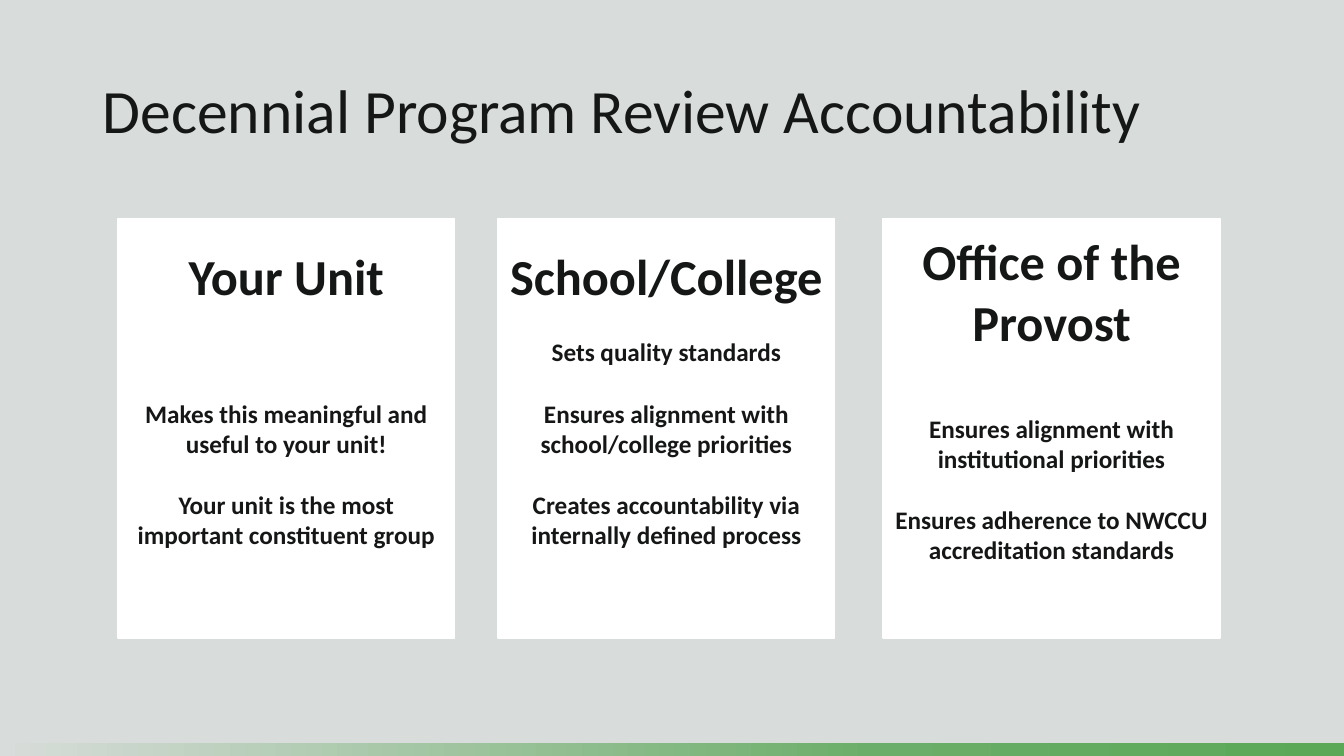
import pptx
import pptx.util
import pptx.dml.color
import pptx.enum.shapes
import pptx.enum.text

Inches = pptx.util.Inches
Pt = pptx.util.Pt
RGBColor = pptx.dml.color.RGBColor
RECTANGLE = pptx.enum.shapes.MSO_SHAPE.RECTANGLE
MIDDLE = pptx.enum.text.MSO_ANCHOR.MIDDLE
ALIGN = pptx.enum.text.PP_ALIGN

MIST = RGBColor(0xD8, 0xDC, 0xDA)
LEAF = RGBColor(0x6B, 0xAE, 0x69)
GREEN = RGBColor(0x5A, 0xA8, 0x58)
INK = RGBColor(0x15, 0x17, 0x16)
WHITE = RGBColor(0xFF, 0xFF, 0xFF)

WIDTH, HEIGHT = 13.33, 7.5
BAR_HEIGHT = 0.13
BAR_SPLIT = WIDTH * 0.65
CARD_TOP, CARD_WIDTH, CARD_HEIGHT = 2.17, 3.34, 4.16
LINE = 22

CARDS = [
    (1.17, "Your Unit", 3, [
        "Makes this meaningful and useful to your unit!",
        "Your unit is the most important constituent group",
    ]),
    (4.94, "School/College", 1, [
        "Sets quality standards",
        "Ensures alignment with school/college priorities",
        "Creates accountability via internally defined process",
    ]),
    (8.76, "Office of the Provost", 2, [
        "Ensures alignment with institutional priorities",
        "Ensures adherence to NWCCU accreditation standards",
    ]),
]


def add_rectangle(page, left, top, width, height):
    box = page.shapes.add_shape(
        RECTANGLE, Inches(left), Inches(top), Inches(width), Inches(height))
    box.shadow.inherit = False
    return box


def style(para, size, bold, align):
    para.alignment = align
    para.font.name = "Calibri"
    para.font.size = Pt(size)
    para.font.bold = bold
    para.font.color.rgb = INK


deck = pptx.Presentation()
deck.slide_width = Inches(WIDTH)
deck.slide_height = Inches(HEIGHT)
page = deck.slides.add_slide(deck.slide_layouts.get_by_name("Title Only"))
page.background.fill.solid()
page.background.fill.fore_color.rgb = MIST

for left, right, start, end in [(0, BAR_SPLIT, MIST, LEAF),
                                (BAR_SPLIT, WIDTH, LEAF, GREEN)]:
    bar = add_rectangle(page, left, HEIGHT - BAR_HEIGHT, right - left, BAR_HEIGHT)
    bar.line.fill.background()
    bar.fill.gradient()
    bar.fill.gradient_angle = 0
    for stop, color in zip(bar.fill.gradient_stops, (start, end)):
        stop.color.rgb = color

title = page.shapes.title
title.left, title.top = Inches(0.92), Inches(0.4)
title.width, title.height = Inches(11.5), Inches(1.45)
title.text_frame.text = "Decennial Program Review Accountability"
title.text_frame.auto_size = pptx.enum.text.MSO_AUTO_SIZE.NONE
title.text_frame.vertical_anchor = MIDDLE
title_para = title.text_frame.paragraphs[0]
title_para.line_spacing = 0.9
style(title_para, 44, False, ALIGN.LEFT)

for left, heading, gap_lines, points in CARDS:
    card = add_rectangle(page, left, CARD_TOP, CARD_WIDTH, CARD_HEIGHT)
    card.fill.solid()
    card.fill.fore_color.rgb = WHITE
    card.line.color.rgb = WHITE
    card.line.width = Pt(1)
    frame = card.text_frame
    frame.word_wrap = True
    frame.vertical_anchor = MIDDLE
    frame.margin_bottom = Inches(0.05) + Pt(2 * LINE)
    frame.text = heading
    style(frame.paragraphs[0], 36, True, ALIGN.CENTER)
    for index, point in enumerate(points):
        para = frame.add_paragraph()
        para.text = point
        para.space_before = Pt(LINE * (gap_lines if index == 0 else 1))
        style(para, 18, True, ALIGN.CENTER)

deck.save("out.pptx")
